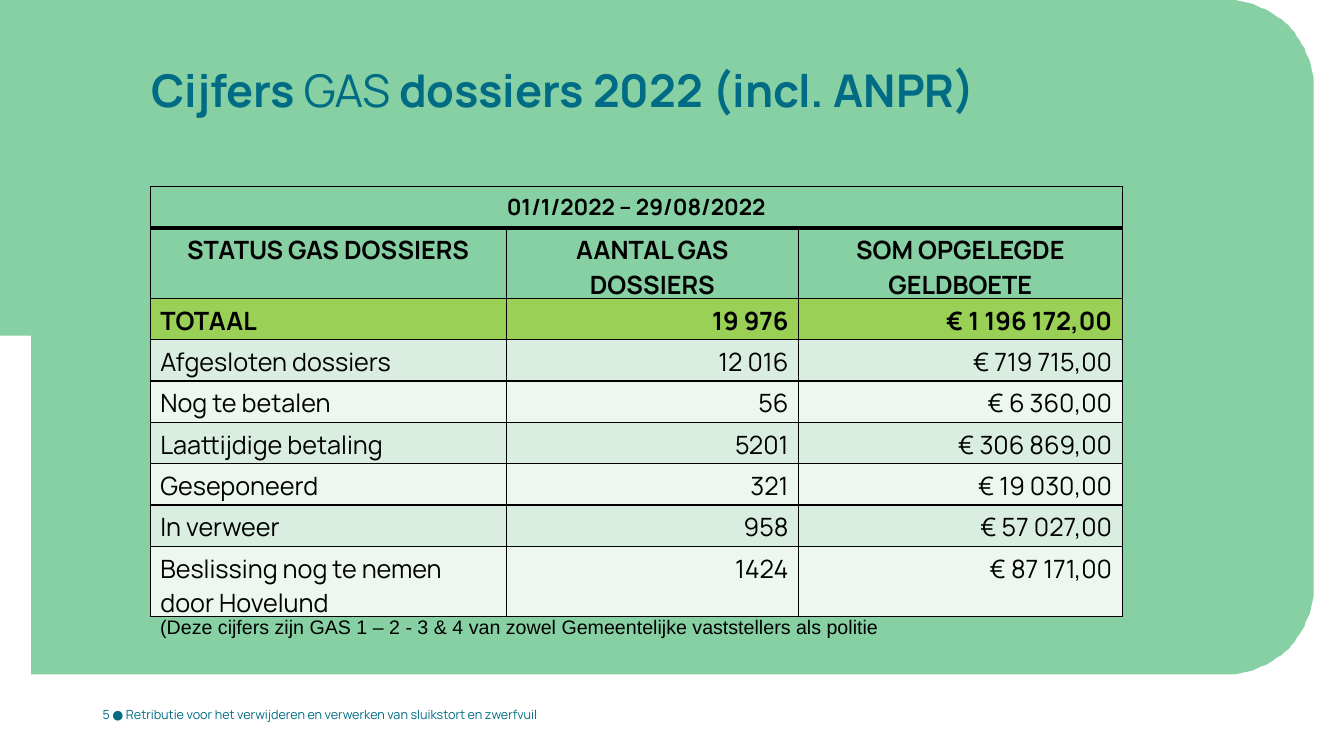
import math
from lxml import etree
from pptx import Presentation, util as u
from pptx.dml.color import RGBColor
from pptx.enum import text
from pptx.oxml import ns

PX = 9144
GREEN = RGBColor(0x87, 0xD0, 0xA4)
LIME = RGBColor(0x9A, 0xD0, 0x55)
MINT = RGBColor(0xD9, 0xEE, 0xE0)
PALE = RGBColor(0xED, 0xF7, 0xF0)
TEAL = RGBColor(0x00, 0x6B, 0x84)
BLACK = RGBColor(0, 0, 0)

TITLE = [("Cijfers ", True), ("GAS", False), (" dossiers 2022 (incl. ANPR)", True)]
FOOTER = "5 ● Retributie voor het verwijderen en verwerken van sluikstort en zwerfvuil"
NOTE = "(Deze cijfers zijn GAS 1 – 2 - 3 & 4 van zowel Gemeentelijke vaststellers als politie"
ROWS = [
    ("01/1/2022 – 29/08/2022", "", ""),
    ("STATUS GAS DOSSIERS", "AANTAL GAS DOSSIERS", "SOM OPGELEGDE GELDBOETE"),
    ("TOTAAL", "19 976", "€ 1 196 172,00"),
    ("Afgesloten dossiers", "12 016", "€ 719 715,00"),
    ("Nog te betalen", "56", "€ 6 360,00"),
    ("Laattijdige betaling", "5201", "€ 306 869,00"),
    ("Geseponeerd", "321", "€ 19 030,00"),
    ("In verweer", "958", "€ 57 027,00"),
    ("Beslissing nog te nemen door Hovelund", "1424", "€ 87 171,00"),
]
COLUMN_WIDTHS = (353, 290, 321)
ROW_HEIGHT = 41
PANEL_RIGHT, PANEL_BOTTOM, CORNER = 1303, 669, 87
NOTCH_X, NOTCH_Y = 31, 333


def px(*lengths):
    return [u.Emu(length * PX) for length in lengths]


def corner(center_y, start):
    center_x = PANEL_RIGHT - CORNER
    angles = [math.radians(start + step * 3) for step in range(31)]
    return [(center_x + CORNER * math.cos(a), center_y + CORNER * math.sin(a)) for a in angles]


def add_panel(slide):
    outline = [*corner(CORNER, -90), *corner(PANEL_BOTTOM - CORNER, 0),
               (NOTCH_X, PANEL_BOTTOM), (NOTCH_X, NOTCH_Y), (0, NOTCH_Y)]
    builder = slide.shapes.build_freeform(0, 0, scale=PX)
    builder.add_line_segments(outline, close=True)
    panel = builder.convert_to_shape()
    panel.shadow.inherit = False
    panel.fill.solid()
    panel.fill.fore_color.rgb = GREEN
    panel.line.fill.background()


def style(font, size, color, name="Manrope", bold=False):
    font.size, font.name, font.bold = u.Pt(size), name, bold
    font.color.rgb = color


def add_text(slide, box, content, size, color, name="Manrope"):
    frame = slide.shapes.add_textbox(*px(*box)).text_frame
    frame.word_wrap = True
    paragraph = frame.paragraphs[0]
    paragraph.text = content
    style(paragraph.font, size, color, name)
    return frame


def add_title(slide):
    frame = add_text(slide, (150, 72, 1021, 95), "", 32.2, TEAL)
    frame.margin_left = frame.margin_right = frame.margin_top = frame.margin_bottom = 0
    paragraph = frame.paragraphs[0]
    paragraph.line_spacing = 0.8
    for content, bold in TITLE:
        run = paragraph.add_run()
        run.text = content
        style(run.font, 32.2, TEAL, bold=bold)


def add_borders(cell, widths):
    properties = cell._tc.get_or_add_tcPr()
    for side, width in zip("LRTB", widths):
        line = etree.SubElement(properties, ns.qn(f"a:ln{side}"), w=str(u.Pt(width)))
        fill = etree.SubElement(line, ns.qn("a:solidFill"))
        etree.SubElement(fill, ns.qn("a:srgbClr"), val=str(BLACK))


def row_fill(row):
    if row < 2:
        return GREEN
    if row == 2:
        return LIME
    return MINT if row % 2 else PALE


def add_figures(slide):
    box = px(149, 185, sum(COLUMN_WIDTHS), ROW_HEIGHT * len(ROWS))
    table = slide.shapes.add_table(len(ROWS), len(COLUMN_WIDTHS), *box).table
    for column, width in zip(table.columns, px(*COLUMN_WIDTHS)):
        column.width = width
    for row, values in enumerate(ROWS):
        for column, value in enumerate(values):
            cell = table.cell(row, column)
            add_borders(cell, (1, 1, 3 if row == 1 else 1, 3 if row == 0 else 1))
            cell.fill.solid()
            cell.fill.fore_color.rgb = row_fill(row)
            paragraph = cell.text_frame.paragraphs[0]
            paragraph.text = value
            style(paragraph.font, 16 if row == 0 else 18, BLACK, bold=row < 3)
            if row < 2:
                paragraph.alignment = text.PP_ALIGN.CENTER
            elif column:
                paragraph.alignment = text.PP_ALIGN.RIGHT
    period = table.cell(0, 0)
    period.merge(table.cell(0, len(COLUMN_WIDTHS) - 1))
    period.vertical_anchor = text.MSO_ANCHOR.MIDDLE


def main():
    presentation = Presentation()
    presentation.slide_width, presentation.slide_height = px(1333, 750)
    slide = presentation.slides.add_slide(presentation.slide_layouts[6])
    add_panel(slide)
    footer = add_text(slide, (92, 689, 511, 40), FOOTER, 9, TEAL)
    footer.vertical_anchor = text.MSO_ANCHOR.MIDDLE
    add_title(slide)
    add_figures(slide)
    add_text(slide, (149, 605, 963, 64), NOTE, 14, BLACK, "Arial")
    presentation.save("out.pptx")


if __name__ == "__main__":
    main()
